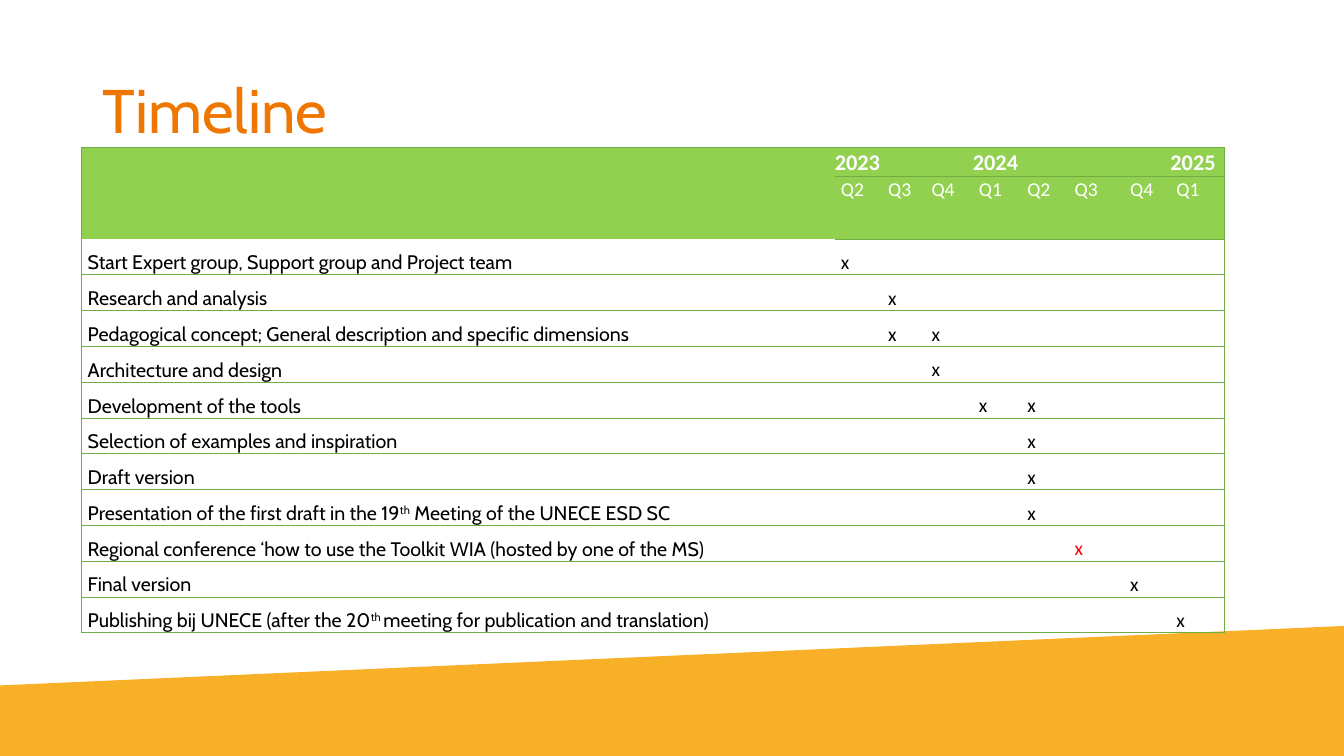
from dataclasses import dataclass

from lxml import etree
from pptx import Presentation
from pptx.dml.color import RGBColor
from pptx.enum import text
from pptx.oxml import ns
from pptx.util import Inches, Pt


@dataclass(frozen=True)
class Theme:
    orange: str = "EE7601"
    amber: str = "F9B029"
    header: str = "92D050"
    border: str = "70AD47"
    white: str = "FFFFFF"
    black: str = "000000"
    red: str = "FF0000"
    text_font: str = "Cabin"
    mark_font: str = "Calibri"
    title_size: int = 44
    year_size: int = 16
    body_size: int = 14


THEME = Theme()
NO_GRID_STYLE = "{2D5ABB26-0587-4C30-8999-92F81FD0307C}"


def style_paragraph(para, name, size, color, spacing, bold=False):
    para.line_spacing = spacing
    para.font.name = name
    para.font.size = Pt(size)
    para.font.bold = bold
    para.font.color.rgb = RGBColor.from_string(color)


def add_border(cell, side):
    """Draw a thin line on one side (L, R, T or B); call before setting the fill."""
    line = etree.SubElement(cell._tc.get_or_add_tcPr(), ns.qn(f"a:ln{side}"), w=str(Pt(0.5)))
    fill = etree.SubElement(line, ns.qn("a:solidFill"))
    etree.SubElement(fill, ns.qn("a:srgbClr"), val=THEME.border)


deck = Presentation()
deck.slide_width, deck.slide_height = Inches(13.33), Inches(7.5)
page = deck.slides.add_slide(deck.slide_layouts[5])

# Sloping band along the bottom
outline = page.shapes.build_freeform(Inches(0), Inches(6.8))
outline.add_line_segments(
    [(Inches(x), Inches(y)) for x, y in [(13.33, 6.21), (13.33, 7.5), (0, 7.5)]])
band = outline.convert_to_shape()
band.shadow.inherit = False
band.fill.solid()
band.fill.fore_color.rgb = RGBColor.from_string(THEME.amber)
band.line.fill.background()

title = page.shapes.title
title.left, title.top, title.width, title.height = map(Inches, (0.92, 0.4, 11.5, 1.45))
title.text_frame.text = "Timeline"
title.text_frame.vertical_anchor = text.MSO_ANCHOR.MIDDLE
para = title.text_frame.paragraphs[0]
para.alignment = text.PP_ALIGN.LEFT
style_paragraph(para, THEME.text_font, THEME.title_size, THEME.orange, 0.9)

# Year, first column, last column
years = [("2023", 1, 3), ("2024", 4, 7), ("2025", 8, 8)]
quarters = ["Q2", "Q3", "Q4", "Q1", "Q2", "Q3", "Q4", "Q1"]
# Activity as text pieces (every second piece is superscript), marked columns
activities = [
    (["Start Expert group, Support group and Project team"], [1]),
    (["Research and analysis"], [2]),
    (["Pedagogical concept; General description and specific dimensions"], [2, 3]),
    (["Architecture and design"], [3]),
    (["Development of the tools"], [4, 5]),
    (["Selection of examples and inspiration"], [5]),
    (["Draft version"], [5]),
    (["Presentation of the first draft in the 19", "th", " Meeting of the UNECE ESD SC"], [5]),
    (["Regional conference ‘how to use the Toolkit WIA (hosted by one of the MS)"], [6]),
    (["Final version"], [7]),
    (["Publishing bij UNECE (after the 20", "th ", "meeting for publication and translation)"], [8]),
]
RED_MARK = (10, 6)

contents = {(0, first): [year] for year, first, last in years}
contents.update({(1, col): [quarter] for col, quarter in enumerate(quarters, 1)})
for row, (pieces, marks) in enumerate(activities, 2):
    contents[row, 0] = pieces
    contents.update({(row, col): ["x"] for col in marks})

widths = [7.47, 0.47, 0.43, 0.47, 0.48, 0.47, 0.55, 0.46, 0.53]
heights = [0.29, 0.62] + [3.9 / len(activities)] * len(activities)
frame = page.shapes.add_table(len(heights), len(widths), Inches(0.81), Inches(1.46),
                              Inches(sum(widths)), Inches(sum(heights)))
table = frame.table
table.first_row = table.horz_banding = False
table._tbl.tblPr.find(ns.qn("a:tableStyleId")).text = NO_GRID_STYLE
for column, width in zip(table.columns, widths):
    column.width = Inches(width)
for table_row, height in zip(table.rows, heights):
    table_row.height = Inches(height)

for row in range(len(heights)):
    for col in range(len(widths)):
        cell = table.cell(row, col)
        is_header = row < 2
        cell.margin_top = cell.margin_bottom = 0
        cell.margin_left = cell.margin_right = Inches(0 if row == 0 else 0.06)

        if col == 0:
            add_border(cell, "L")
        if col == len(widths) - 1:
            add_border(cell, "R")
        if row == 0:
            add_border(cell, "T")
        if col > 0 or not is_header:
            add_border(cell, "B")
        if is_header:
            cell.fill.solid()
            cell.fill.fore_color.rgb = RGBColor.from_string(THEME.header)
        else:
            cell.fill.background()

        para = cell.text_frame.paragraphs[0]
        para.alignment = text.PP_ALIGN.JUSTIFY
        color = THEME.white if is_header else THEME.red if (row, col) == RED_MARK else THEME.black
        style_paragraph(para, THEME.mark_font if col else THEME.text_font,
                        THEME.year_size if row == 0 else THEME.body_size,
                        color, 1.07 if is_header else 1.5, bold=row == 0)
        for index, piece in enumerate(contents.get((row, col), [])):
            span = para.add_run()
            span.text = piece
            if index % 2:
                span._r.get_or_add_rPr().set("baseline", "30000")

table.cell(0, 0).merge(table.cell(1, 0))
for year, first, last in years:
    if last > first:
        table.cell(0, first).merge(table.cell(0, last))

deck.save("out.pptx")
